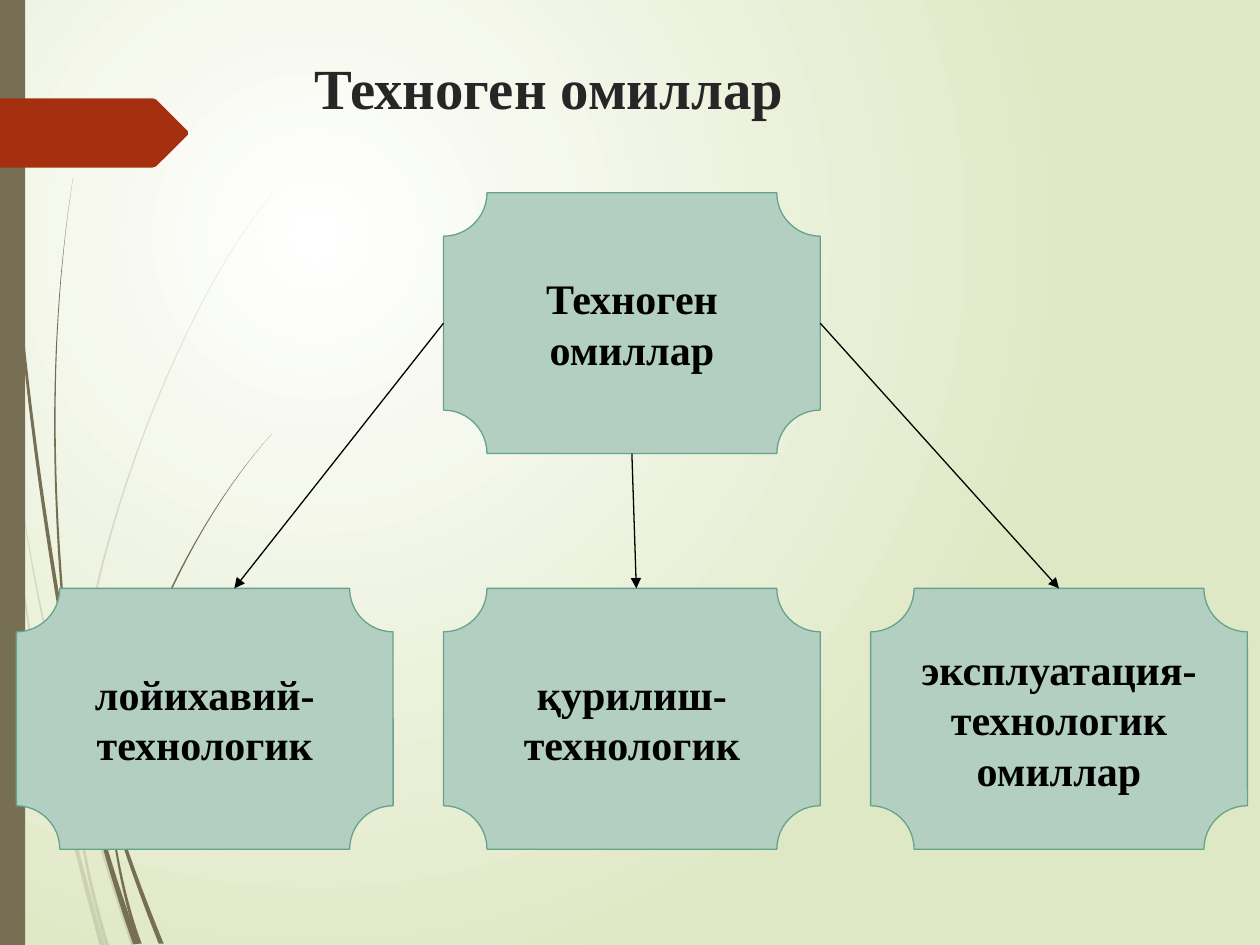
"""Build a slide that splits technogenic factors into three groups."""
from lxml.etree import SubElement
from pptx import Presentation
from pptx.dml.color import RGBColor
from pptx.enum.shapes import MSO_CONNECTOR, MSO_SHAPE
from pptx.enum.text import MSO_ANCHOR, PP_ALIGN
from pptx.oxml.ns import qn
from pptx.util import Inches, Pt

WHITE = RGBColor(0xFF, 0xFF, 0xFF)
PALE_GREEN = RGBColor(0xDF, 0xE8, 0xC4)
OLIVE = RGBColor(0x76, 0x6F, 0x54)
RUST = RGBColor(0xA5, 0x30, 0x10)
CHARCOAL = RGBColor(0x26, 0x26, 0x26)
BLACK = RGBColor(0, 0, 0)
SAGE = RGBColor(0xB3, 0xCF, 0xC2)
SAGE_EDGE = RGBColor(0x65, 0xA4, 0x8B)

deck = Presentation()
deck.slide_width, deck.slide_height = Inches(10), Inches(7.5)
COLUMN = deck.slide_width / 10
ROW = deck.slide_height / 7.5
page = deck.slides.add_slide(deck.slide_layouts[6])


def write_text(box, text, size=24, color=BLACK, align=PP_ALIGN.CENTER, anchor=MSO_ANCHOR.MIDDLE):
    frame = box.text_frame
    frame.word_wrap = True
    frame.vertical_anchor = anchor
    para = frame.paragraphs[0]
    para.alignment = align
    span = para.add_run()
    span.text = text
    span.font.name = "Times New Roman"
    span.font.size = Pt(size)
    span.font.bold = True
    span.font.color.rgb = color


def draw_outline(points, color, opacity=100):
    corners = [(round(x * COLUMN), round(y * ROW)) for x, y in points]
    builder = page.shapes.build_freeform(*corners[0])
    builder.add_line_segments(corners[1:], close=True)
    outline = builder.convert_to_shape()
    outline.shadow.inherit = False
    outline.fill.solid()
    outline.fill.fore_color.rgb = color
    outline.line.fill.background()
    if opacity < 100:
        tint = outline._element.spPr.find(".//" + qn("a:srgbClr"))
        SubElement(tint, qn("a:alpha"), val=str(opacity * 1000))


backdrop = page.background.fill
backdrop.gradient()
for stop, color in zip(backdrop.gradient_stops, (WHITE, PALE_GREEN)):
    stop.color.rgb = color
gradient = page._element.find(".//" + qn("a:gradFill"))
gradient.remove(gradient.find(qn("a:lin")))
circle = SubElement(gradient, qn("a:path"), path="circle")
SubElement(circle, qn("a:fillToRect"), l="50000", t="50000", r="100000", b="100000")

grass_blades = [
    (20, 0.02, 0.01, (0.01, 2.9), (0.03, 3.1), (0.05, 3.3), (0.08, 3.5)),
    (20, 0, 0.04, (0.1, 3.45), (0.27, 4.9), (0.65, 6.3), (1.06, 7.5)),
    (20, 0, 0.04, (0.08, 3.5), (0.13, 4.9), (0.48, 6.3), (0.81, 7.5)),
    (20, 0.01, 0.03, (0.59, 5.99), (0.6, 6.5), (0.7, 7), (0.85, 7.5)),
    (20, 0, 0.02, (2.17, 1.53), (1.53, 2.25), (0.63, 4.35), (0.6, 5.9)),
    (100, 0.01, 0.03, (0.03, 0), (0.04, 1.6), (0.2, 3.2), (0.47, 4.81)),
    (100, 0, 0.04, (0.5, 4.72), (0.63, 5.65), (0.92, 6.6), (1.28, 7.49)),
    (100, 0, 0.05, (0.47, 4.77), (0.55, 5.75), (0.78, 6.65), (1.08, 7.49)),
    (100, 0, 0.02, (0.58, 1.41), (0.41, 2.5), (0.4, 3.6), (0.5, 4.8)),
    (100, 0.01, 0.03, (0.88, 6.45), (0.92, 6.8), (1, 7.19), (1.11, 7.49)),
    (100, 0, 0.03, (2.16, 3.44), (1.52, 4.15), (0.92, 5.4), (0.9, 6.4)),
]
STEPS = 24
for opacity, tip, base, *spine in grass_blades:
    left_edge, right_edge = [], []
    for step in range(STEPS + 1):
        t = step / STEPS
        weights = ((1 - t) ** 3, 3 * t * (1 - t) ** 2, 3 * t * t * (1 - t), t ** 3)
        x, y = (sum(w * knot[axis] for w, knot in zip(weights, spine)) for axis in (0, 1))
        half = (tip + (base - tip) * t) / 2
        left_edge.append((x - half, y))
        right_edge.append((x + half, y))
    draw_outline(left_edge + right_edge[::-1], OLIVE, opacity)

side_bar = page.shapes.add_shape(MSO_SHAPE.RECTANGLE, 0, 0, int(0.2 * COLUMN), deck.slide_height)
side_bar.shadow.inherit = False
side_bar.fill.solid()
side_bar.fill.fore_color.rgb = OLIVE
side_bar.line.fill.background()
draw_outline([(0, 0.78), (1.21, 0.78), (1.24, 0.79), (1.49, 1.04),
              (1.49, 1.07), (1.24, 1.32), (1.21, 1.33), (0, 1.33)], RUST)

title = page.shapes.add_textbox(int(1.4 * COLUMN), int(0.31 * ROW), int(8.17 * COLUMN), int(1.07 * ROW))
title.text_frame.margin_left = int(1.1 * COLUMN)
title.text_frame.margin_top = int(0.11 * ROW)
write_text(title, "Техноген омиллар", size=32.4, color=CHARCOAL, align=PP_ALIGN.LEFT, anchor=MSO_ANCHOR.TOP)

plaques = []
for text, place, top in (("Техноген омиллар", 1, 1.53), ("лойихавий-технологик", 0, 4.67),
                         ("қурилиш-технологик", 1, 4.67), ("эксплуатация-технологик омиллар", 2, 4.67)):
    plaque = page.shapes.add_shape(MSO_SHAPE.PLAQUE, int((0.13 + 3.39 * place) * COLUMN), int(top * ROW),
                                   int(2.99 * COLUMN), int(2.07 * ROW))
    plaque.shadow.inherit = False
    plaque.fill.solid()
    plaque.fill.fore_color.rgb = SAGE
    plaque.line.color.rgb = SAGE_EDGE
    plaque.line.width = Pt(0.75)
    write_text(plaque, text)
    plaques.append(plaque)

for side, end in ((1, 1.86), (2, 5.05), (3, 8.41)):
    arrow = page.shapes.add_connector(MSO_CONNECTOR.STRAIGHT, 0, 0, int(end * COLUMN), int(4.67 * ROW))
    arrow.begin_connect(plaques[0], side)
    if side == 3:
        arrow.end_connect(plaques[3], 0)
    arrow.line.color.rgb = BLACK
    arrow.line.width = Pt(0.75)
    SubElement(arrow.line._get_or_add_ln(), qn("a:tailEnd"), type="triangle")
    SubElement(arrow._element.spPr, qn("a:effectLst"))

deck.save("out.pptx")
